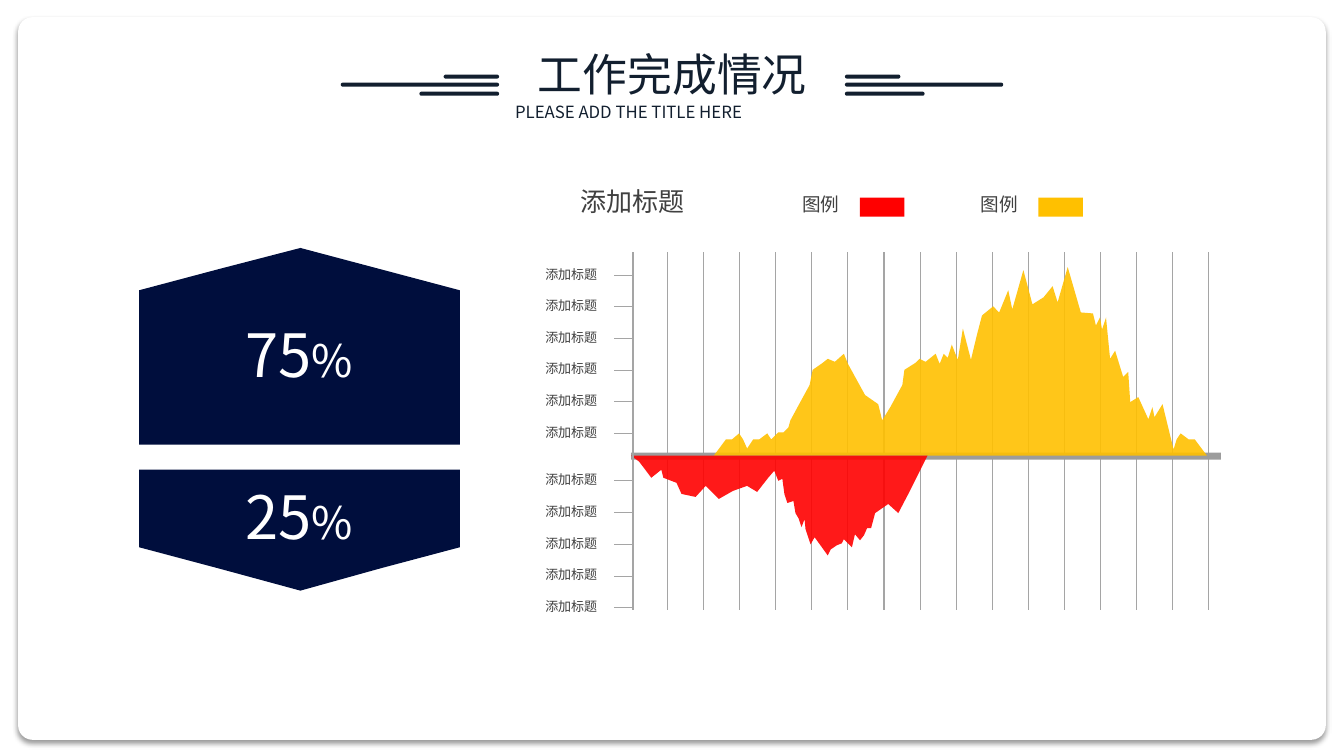
from lxml.etree import SubElement
from pptx import Presentation
from pptx.dml.color import RGBColor
from pptx.enum.shapes import MSO_CONNECTOR, MSO_SHAPE
from pptx.enum.text import MSO_AUTO_SIZE, PP_ALIGN
from pptx.oxml.ns import qn
from pptx.util import Inches, Pt

WHITE = RGBColor(0xFF, 0xFF, 0xFF)
NAVY = RGBColor(0x00, 0x0E, 0x3D)
INK = RGBColor(0x12, 0x1F, 0x2F)
GREY_TEXT = RGBColor(0x40, 0x40, 0x40)
GRID = RGBColor(0xA5, 0xA5, 0xA5)
AXIS = RGBColor(0x9C, 0x9C, 0x9C)
RED = RGBColor(0xFF, 0x00, 0x00)
GOLD = RGBColor(0xFF, 0xC0, 0x00)
FONT = "Noto Sans CJK SC"

# Content: text
TITLE = "工作完成情况"
SUBTITLE = "PLEASE ADD THE TITLE HERE"
CHART_TITLE = "添加标题"
TICK_LABEL = "添加标题"
LEGEND = [("图例", 7.85, 8.53, RED), ("图例", 9.62, 10.3, GOLD)]
SHARES = [("75", 3.1), ("25", 4.71)]

# Content: title bars as (top, width)
TITLE_BARS = [(0.82, 1.57), (0.74, 0.55), (0.91, 0.79)]
BARS_LEFT_END, BARS_RIGHT_START = 4.95, 8.38

# Content: chart frame; ticks as (first, last, count)
GRID_TOP, GRID_BOTTOM = 2.5, 6.05
GRID_COLUMNS = (6.62, 11.99, 16)
TICK_ROWS = [(2.73, 4.3, 6), (4.77, 6.03, 5)]
AXIS_LEFT, TICK_LEFT = 6.28, 6.09

# Content: outlines in hundredths of an inch
UPPER_BADGE = [(456, 288), (377, 267), (298, 246), (217, 267), (138, 288),
               (138, 441), (456, 441)]
LOWER_BADGE = [(138, 466), (138, 543), (217, 564), (298, 586), (377, 564),
               (456, 543), (456, 466)]
GOLD_AREA = [
    (1185, 436), (1179, 436), (1171, 430), (1167, 436), (1164, 446), (1153, 401),
    (1145, 414), (1143, 404), (1139, 416), (1129, 394), (1121, 399), (1119, 369),
    (1114, 374), (1106, 348), (1101, 356), (1097, 315), (1093, 327), (1091, 315),
    (1087, 323), (1084, 311), (1072, 310), (1059, 265), (1049, 300), (1044, 284),
    (1035, 295), (1024, 302), (1015, 268), (1004, 307), (1000, 288), (991, 310),
    (985, 304), (974, 313), (969, 332), (963, 357), (955, 326), (950, 357),
    (944, 342), (940, 355), (936, 351), (932, 361), (928, 351), (918, 359),
    (912, 356), (908, 360), (897, 367), (895, 382), (883, 404), (875, 417),
    (871, 401), (858, 392), (841, 361), (837, 351), (828, 359), (821, 356),
    (816, 360), (806, 367), (803, 382), (791, 404), (784, 417), (782, 424),
    (777, 429), (772, 429), (765, 436), (761, 430), (753, 436), (747, 436),
    (741, 445), (737, 436), (733, 430), (726, 436), (720, 436), (708, 452),
    (1197, 452)]
RED_AREA = [
    (626, 452), (634, 458), (646, 474), (656, 466), (658, 474), (671, 479),
    (676, 490), (690, 493), (700, 482), (713, 495), (727, 487), (741, 482),
    (751, 488), (762, 474), (768, 467), (772, 477), (776, 475), (778, 490),
    (781, 499), (787, 497), (789, 509), (792, 514), (795, 523), (798, 515),
    (799, 525), (804, 540), (808, 533), (816, 544), (821, 551), (824, 545),
    (830, 541), (835, 539), (837, 535), (845, 543), (848, 530), (853, 536),
    (857, 531), (860, 524), (864, 524), (868, 509), (881, 500), (891, 509),
    (902, 488), (920, 452)]


def spread(first, last, count):
    return [first + (last - first) * i / (count - 1) for i in range(count)]


def paint(shape, color, alpha=None):
    shape.shadow.inherit = False
    shape.fill.solid()
    shape.fill.fore_color.rgb = color
    shape.line.fill.background()
    if alpha:
        color_node = shape.fill._xPr.find(qn("a:solidFill"))[0]
        SubElement(color_node, qn("a:alpha"), val=str(alpha * 1000))
    return shape


def add_block(shapes, kind, box, color, corner=None):
    shape = shapes.add_shape(kind, *map(Inches, box))
    if corner is not None:
        shape.adjustments[0] = corner
    return paint(shape, color)


def add_outline(points, color, alpha=None):
    builder = slide.shapes.build_freeform(*points[0], scale=Inches(0.01))
    builder.add_line_segments(points[1:], close=True)
    return paint(builder.convert_to_shape(), color, alpha)


def add_line(start, end, width=0.75):
    points = map(Inches, (*start, *end))
    line = slide.shapes.add_connector(MSO_CONNECTOR.STRAIGHT, *points)
    line.line.color.rgb = GRID
    line.line.width = Pt(width)
    SubElement(line._element.spPr, qn("a:effectLst"))


def add_text(shapes, box, runs, color, align=PP_ALIGN.CENTER, wrap=False):
    frame = shapes.add_textbox(*map(Inches, box)).text_frame
    frame.word_wrap = wrap
    frame.auto_size = MSO_AUTO_SIZE.SHAPE_TO_FIT_TEXT
    paragraph = frame.paragraphs[0]
    paragraph.alignment = align
    for text, size in runs:
        run = paragraph.add_run()
        run.text = text
        run.font.color.rgb = color
        for name, value in {"size": Pt(size), "name": FONT}.items():
            setattr(run.font, name, value)
        SubElement(run.font._element, qn("a:ea"), typeface=FONT)


presentation = Presentation()
presentation.slide_width = Inches(13.33)
presentation.slide_height = Inches(7.5)
slide = presentation.slides.add_slide(presentation.slide_layouts[6])

# Card with a soft shadow below
card = add_block(slide.shapes, MSO_SHAPE.ROUNDED_RECTANGLE,
                 (0.18, 0.17, 12.97, 7.17), WHITE, 0.02)
shadow = SubElement(card._element.spPr.find(qn("a:effectLst")), qn("a:outerShdw"),
                    blurRad=str(Pt(4)), dist=str(Pt(3)), dir=str(90 * 60000),
                    algn="t", rotWithShape="0")
shadow_color = SubElement(shadow, qn("a:srgbClr"), val="000000")
SubElement(shadow_color, qn("a:alpha"), val="40000")

# Grid, share badges, legend swatches and areas
for x in spread(*GRID_COLUMNS):
    add_line((x, GRID_TOP), (x, GRID_BOTTOM))
for badge in (UPPER_BADGE, LOWER_BADGE):
    add_outline(badge, NAVY)
for _, _, swatch_left, color in LEGEND:
    add_block(slide.shapes, MSO_SHAPE.RECTANGLE, (swatch_left, 1.96, 0.44, 0.19), color)
add_block(slide.shapes, MSO_SHAPE.RECTANGLE, (6.26, 4.49, 5.85, 0.07), AXIS)
add_outline(GOLD_AREA, GOLD, 90)
add_outline(RED_AREA, RED, 90)

# Chart title, shares and legend text
add_text(slide.shapes, (5.66, 1.79, 1.25, 0.42), [(CHART_TITLE, 18.6)], GREY_TEXT,
         PP_ALIGN.LEFT)
for number, top in SHARES:
    add_text(slide.shapes, (2.32, top, 1.3, 0.82), [(number, 42.6), ("%", 32)], WHITE)
for text, left, _, _ in LEGEND:
    add_text(slide.shapes, (left, 1.86, 0.58, 0.33), [(text, 13.3)], GREY_TEXT)

# Vertical axis with ticks and labels
add_line((AXIS_LEFT, GRID_TOP), (AXIS_LEFT, GRID_BOTTOM), 1.5)
for rows in TICK_ROWS:
    for y in spread(*rows):
        add_line((AXIS_LEFT, y), (TICK_LEFT, y))
        add_text(slide.shapes, (5.3, y - 0.14, 0.73, 0.26), [(TICK_LABEL, 9.3)], GREY_TEXT)

# Slide title with bars on both sides
heading = slide.shapes.add_group_shape().shapes
add_text(heading, (5.01, 0.96, 3.31, 0.3), [(SUBTITLE, 12)], INK, PP_ALIGN.JUSTIFY, True)
add_text(heading, (4.97, 0.41, 3.4, 0.64), [(TITLE, 32)], INK, wrap=True)
bars = slide.shapes.add_group_shape().shapes
for top, width in TITLE_BARS:
    for left in (BARS_LEFT_END - width, BARS_RIGHT_START):
        add_block(bars, MSO_SHAPE.ROUNDED_RECTANGLE, (left, top, width, 0.04), INK, 0.5)

presentation.save("out.pptx")
